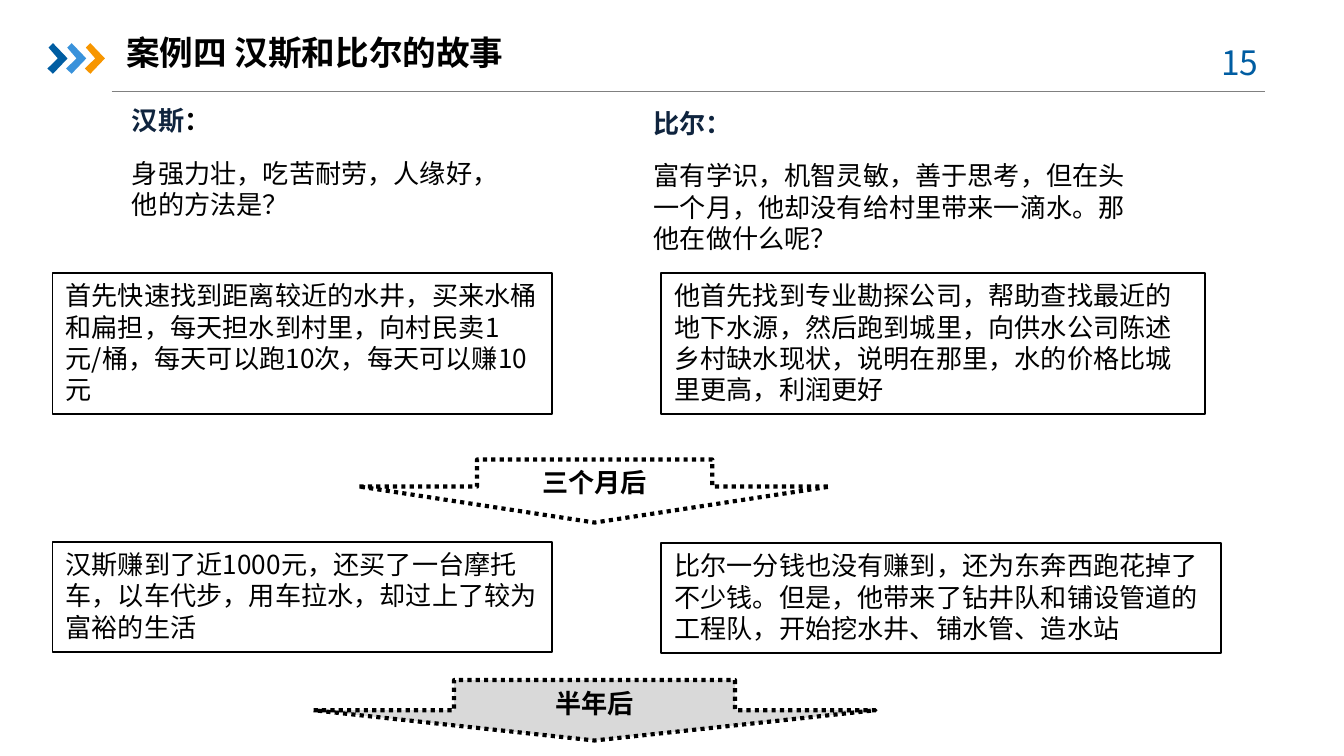
from lxml import etree
from pptx import Presentation
from pptx.dml.color import RGBColor
from pptx.enum.dml import MSO_LINE
from pptx.enum.shapes import MSO_CONNECTOR, MSO_SHAPE
from pptx.enum.text import MSO_ANCHOR, PP_ALIGN
from pptx.oxml.ns import qn
from pptx.util import Pt

RECTANGLE = MSO_SHAPE.RECTANGLE
DOWN_ARROW = MSO_SHAPE.DOWN_ARROW
STRAIGHT = MSO_CONNECTOR.STRAIGHT
DOTTED = MSO_LINE.ROUND_DOT
TOP, MIDDLE = MSO_ANCHOR.TOP, MSO_ANCHOR.MIDDLE
LEFT, CENTER = PP_ALIGN.LEFT, PP_ALIGN.CENTER

FONT = "Noto Sans CJK SC"
BLACK, NAVY, BLUE = "000000", "0F243E", "005DA2"
BODY_SIZE, TITLE_SIZE, LINE_RATIO = 14, 18, 1.2


def color(value):
    return RGBColor.from_string(value)


class StorySlide:
    """Draws the elements of the story slide in one shared style."""

    def __init__(self, presentation):
        self.slide = presentation.slides.add_slide(presentation.slide_layouts[6])
        self.shapes = self.slide.shapes

    def style_run(self, run, size, ink, bold):
        run.font.size = Pt(size)
        run.font.bold = bold
        run.font.color.rgb = color(ink)
        run.font.name = FONT
        east_asian = etree.SubElement(run.font._element, qn("a:ea"))
        east_asian.set("typeface", FONT)

    def set_text(self, shape, text, size=BODY_SIZE, ink=BLACK, bold=False,
                 align=LEFT, anchor=TOP, inset=7.2, wrap=True):
        frame = shape.text_frame
        frame.word_wrap = wrap
        frame.vertical_anchor = anchor
        frame.margin_left = frame.margin_right = Pt(inset)
        frame.margin_top = frame.margin_bottom = Pt(3.6)
        paragraph = frame.paragraphs[0]
        paragraph.text = text
        paragraph.alignment = align
        paragraph.line_spacing = Pt(size * LINE_RATIO)
        self.style_run(paragraph.runs[0], size, ink, bold)
        return paragraph

    def label(self, left, top, width, height, text, **style):
        box = self.shapes.add_textbox(Pt(left), Pt(top), Pt(width), Pt(height))
        return self.set_text(box, text, **style)

    def outlined(self, kind, left, top, width, height, fill, weight):
        shape = self.shapes.add_shape(kind, Pt(left), Pt(top), Pt(width), Pt(height))
        shape.shadow.inherit = False
        if fill:
            shape.fill.solid()
            shape.fill.fore_color.rgb = color(fill)
        else:
            shape.fill.background()
        shape.line.color.rgb = color(BLACK)
        shape.line.width = Pt(weight)
        return shape

    def panel(self, left, top, width, height, text):
        shape = self.outlined(RECTANGLE, left, top, width, height, None, 1)
        self.set_text(shape, text)

    def time_arrow(self, left, top, width, height, text, head, fill=None):
        shape = self.outlined(DOWN_ARROW, left, top, width, height, fill, 2.25)
        shape.line.dash_style = DOTTED
        shape.adjustments[0] = 0.5
        shape.adjustments[1] = head
        self.set_text(shape, text, bold=True, align=CENTER, anchor=MIDDLE)

    def chevron(self, left, top, fill):
        outline = [(0.6, 2.4), (3, 0), (10.8, 8.2), (3, 16.4), (0, 13.6), (5.6, 8.2)]
        points = [(Pt(left + x), Pt(top + y)) for x, y in outline]
        builder = self.shapes.build_freeform(*points[0])
        builder.add_line_segments(points[1:], close=True)
        shape = builder.convert_to_shape()
        shape.shadow.inherit = False
        shape.fill.solid()
        shape.fill.fore_color.rgb = color(fill)
        shape.line.fill.background()

    def rule(self, left, right, y):
        line = self.shapes.add_connector(STRAIGHT, Pt(left), Pt(y), Pt(right), Pt(y))
        line.line.color.rgb = color("808080")
        line.line.width = Pt(0.75)
        etree.SubElement(line._element.spPr, qn("a:effectLst"))

    def person(self, left, top, width, height, name, colon_ink, description):
        heading = self.label(left, top, 57.6, 24.5, name, ink=NAVY, bold=True, wrap=False)
        colon = heading.add_run()
        colon.text = "："
        self.style_run(colon, BODY_SIZE, colon_ink, True)
        self.label(left, top + 28.1, width, height, description)


def main():
    presentation = Presentation()
    presentation.slide_width, presentation.slide_height = Pt(720), Pt(405)
    story = StorySlide(presentation)

    story.rule(59.8, 677.5, 49.2)
    for index, fill in enumerate((BLUE, "3992DB", "F79600")):
        story.chevron(25.4 + 10 * index, 23.1, fill)
    story.label(637.9, 18.7, 52.6, 28.8, "15", size=TITLE_SIZE, ink=BLUE, align=CENTER)
    story.label(67.7, 13, 502.6, 30.2, "案例四 汉斯和比尔的故事", size=TITLE_SIZE,
                bold=True, anchor=MIDDLE, inset=0)

    story.person(63.6, 52.6, 222.5, 41.8, "汉斯", BLACK,
                 "身强力壮，吃苦耐劳，人缘好，他的方法是？")
    story.person(343.1, 54, 272.9, 58.3, "比尔", NAVY,
                 "富有学识，机智灵敏，善于思考，但在头一个月，他却没有给村里带来一滴水。"
                 "那他在做什么呢？")

    hans_left, bill_left, hans_width = 28.1, 354.2, 267.8
    story.panel(hans_left, 146.2, hans_width, 75.6,
                "首先快速找到距离较近的水井，买来水桶和扁担，每天担水到村里，"
                "向村民卖1元/桶，每天可以跑10次，每天可以赚10元")
    story.panel(bill_left, 146.2, 291.6, 75.6,
                "他首先找到专业勘探公司，帮助查找最近的地下水源，然后跑到城里，"
                "向供水公司陈述乡村缺水现状，说明在那里，水的价格比城里更高，利润更好")
    story.time_arrow(192.6, 246.2, 252, 33.8, "三个月后", 0.57)
    story.panel(hans_left, 290.2, hans_width, 59,
                "汉斯赚到了近1000元，还买了一台摩托车，以车代步，用车拉水，"
                "却过上了较为富裕的生活")
    story.panel(bill_left, 290.9, 299.8, 59,
                "比尔一分钱也没有赚到，还为东奔西跑花掉了不少钱。但是，"
                "他带来了钻井队和铺设管道的工程队，开始挖水井、铺水管、造水站")
    story.time_arrow(168, 364.3, 301, 32.4, "半年后", 0.5, fill="D9D9D9")

    presentation.save("out.pptx")


if __name__ == "__main__":
    main()
